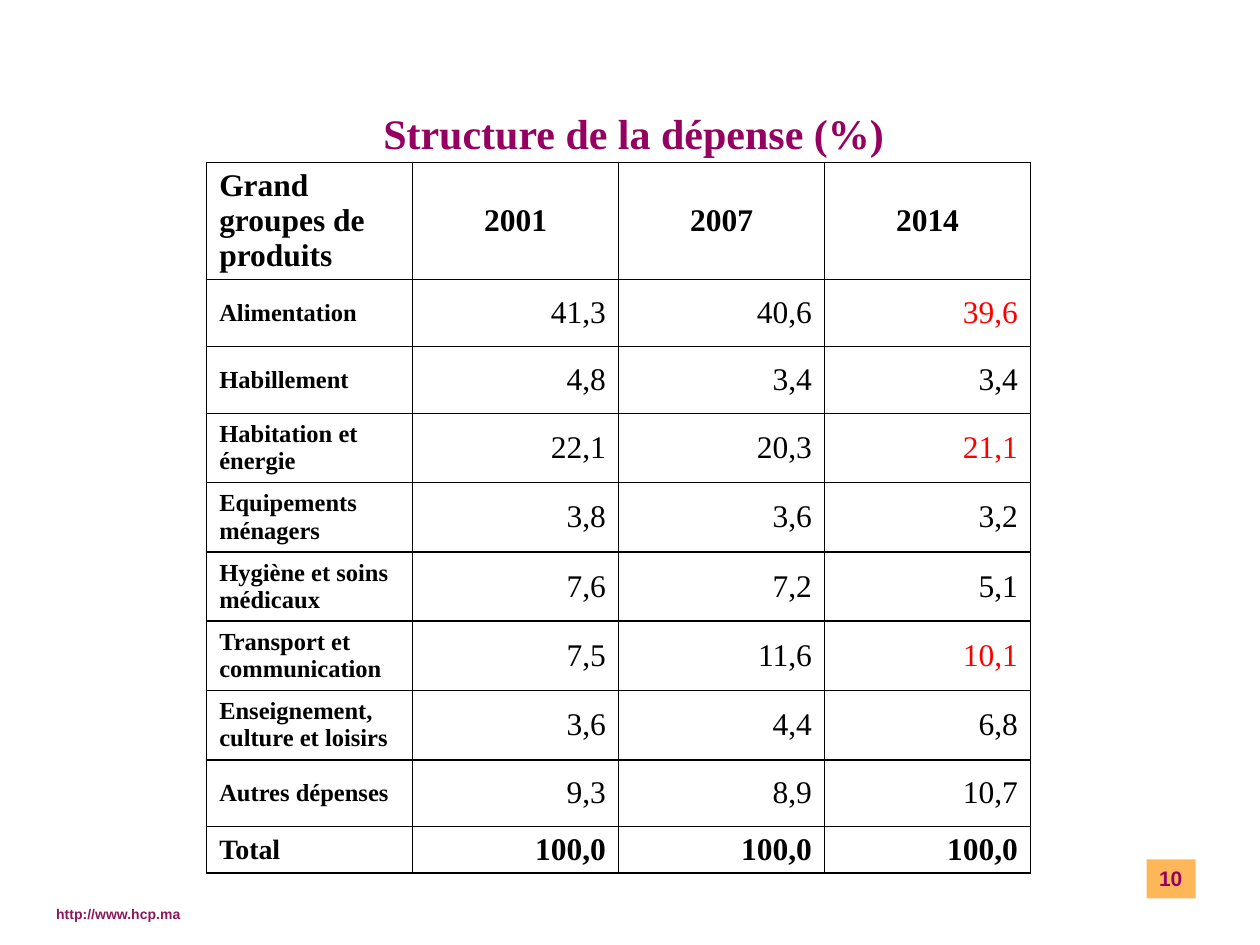
from typing import NamedTuple

from lxml import etree
from pptx import Presentation
from pptx.dml.color import RGBColor
from pptx.enum.shapes import MSO_SHAPE
from pptx.enum.text import MSO_ANCHOR, PP_ALIGN
from pptx.oxml.ns import qn
from pptx.util import Inches, Pt

RECT = MSO_SHAPE.RECTANGLE
TOP, MIDDLE, BOTTOM = MSO_ANCHOR.TOP, MSO_ANCHOR.MIDDLE, MSO_ANCHOR.BOTTOM
LEFT, CENTER, RIGHT = PP_ALIGN.LEFT, PP_ALIGN.CENTER, PP_ALIGN.RIGHT
BLACK = RGBColor(0x00, 0x00, 0x00)
RED = RGBColor(0xFF, 0x00, 0x00)
PLUM = RGBColor(0x95, 0x01, 0x60)
WINE = RGBColor(0x8C, 0x18, 0x5A)
AMBER = RGBColor(0xFE, 0xB7, 0x58)
SERIF, SANS = "Times New Roman", "Arial"
COL_WIDTH = 1.635
PAD = Inches(0.01)


class Style(NamedTuple):
    size: int
    bold: bool = True
    color: RGBColor = BLACK
    align: PP_ALIGN = LEFT
    font: str = SERIF


class Row(NamedTuple):
    label: str
    values: tuple[str, str, str]
    height: float = 0.55
    size: int = 14
    bold: bool = False
    align: PP_ALIGN = RIGHT
    alert: bool = False


ROWS = [
    Row("Grand groupes de produits", ("2001", "2007", "2014"), 0.93, 18, True, CENTER),
    Row("Alimentation", ("41,3", "40,6", "39,6"), 0.53, alert=True),
    Row("Habillement", ("4,8", "3,4", "3,4"), 0.53),
    Row("Habitation et énergie", ("22,1", "20,3", "21,1"), alert=True),
    Row("Equipements ménagers", ("3,8", "3,6", "3,2")),
    Row("Hygiène et soins médicaux", ("7,6", "7,2", "5,1")),
    Row("Transport et communication", ("7,5", "11,6", "10,1"), alert=True),
    Row("Enseignement, culture et loisirs", ("3,6", "4,4", "6,8")),
    Row("Autres dépenses", ("9,3", "8,9", "10,7"), 0.53),
    Row("Total", ("100,0", "100,0", "100,0"), 0.37, 16, True),
]


def write(frame, text: str, style: Style) -> None:
    para = frame.paragraphs[0]
    para.text = text
    para.alignment = style.align
    font = para.font
    font.name, font.size, font.bold = style.font, Pt(style.size), style.bold
    font.color.rgb = style.color


def add_label(slide, box: tuple, text: str, style: Style, anchor: MSO_ANCHOR) -> None:
    frame = slide.shapes.add_textbox(*map(Inches, box)).text_frame
    frame.word_wrap = True
    frame.vertical_anchor = anchor
    write(frame, text, style)


def add_badge(slide, box: tuple, text: str, style: Style) -> None:
    badge = slide.shapes.add_shape(RECT, *map(Inches, box))
    badge.shadow.inherit = False
    badge.fill.solid()
    badge.fill.fore_color.rgb = AMBER
    badge.line.fill.background()
    badge.text_frame.vertical_anchor = TOP
    write(badge.text_frame, text, style)


def set_edges(cell) -> None:
    props = cell._tc.get_or_add_tcPr()
    for place, side in enumerate(("a:lnL", "a:lnR", "a:lnT", "a:lnB")):
        line = etree.Element(qn(side), w=str(Pt(1)))
        fill = etree.SubElement(line, qn("a:solidFill"))
        etree.SubElement(fill, qn("a:srgbClr"), val=str(BLACK))
        props.insert(place, line)


def fill_cell(cell, text: str, style: Style) -> None:
    cell.fill.background()
    cell.vertical_anchor = MIDDLE
    cell.margin_top = cell.margin_bottom = PAD
    write(cell.text_frame, text, style)
    set_edges(cell)


def add_grid(slide, left: float, top: float, rows: list[Row]) -> None:
    count = len(rows[0].values) + 1
    total = sum(row.height for row in rows)
    size = (left, top, count * COL_WIDTH, total)
    table = slide.shapes.add_table(len(rows), count, *map(Inches, size)).table
    table.first_row = table.horz_banding = False
    for index, row in enumerate(rows):
        table.rows[index].height = Inches(row.height)
        fill_cell(table.cell(index, 0), row.label, Style(row.size))
        for col, value in enumerate(row.values, 1):
            color = RED if row.alert and col == count - 1 else BLACK
            style = Style(18, row.bold, color, row.align)
            fill_cell(table.cell(index, col), value, style)


def main() -> None:
    deck = Presentation()
    deck.slide_width, deck.slide_height = Inches(10), Inches(7.5)
    slide = deck.slides.add_slide(deck.slide_layouts[6])
    add_label(slide, (0.27, 7.14, 1.34, 0.23), "http://www.hcp.ma",
              Style(8, color=WINE, align=CENTER, font=SANS), BOTTOM)
    add_label(slide, (0.78, 0.86, 8.5, 0.39), "Structure de la dépense (%)",
              Style(24, color=PLUM, align=CENTER), MIDDLE)
    add_grid(slide, 1.64, 1.29, ROWS)
    add_badge(slide, (9.1, 6.82, 0.39, 0.31), "10", Style(12, color=PLUM, font=SANS))
    deck.save("out.pptx")


if __name__ == "__main__":
    main()
